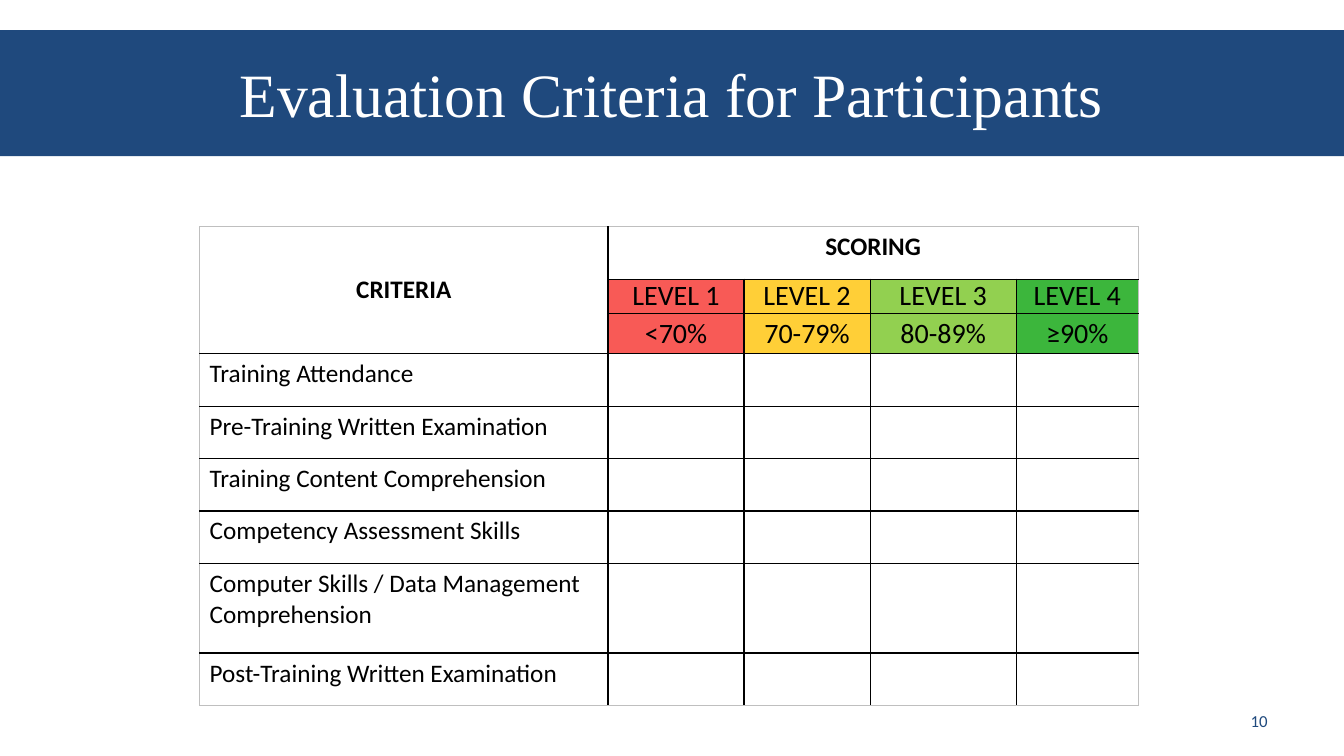
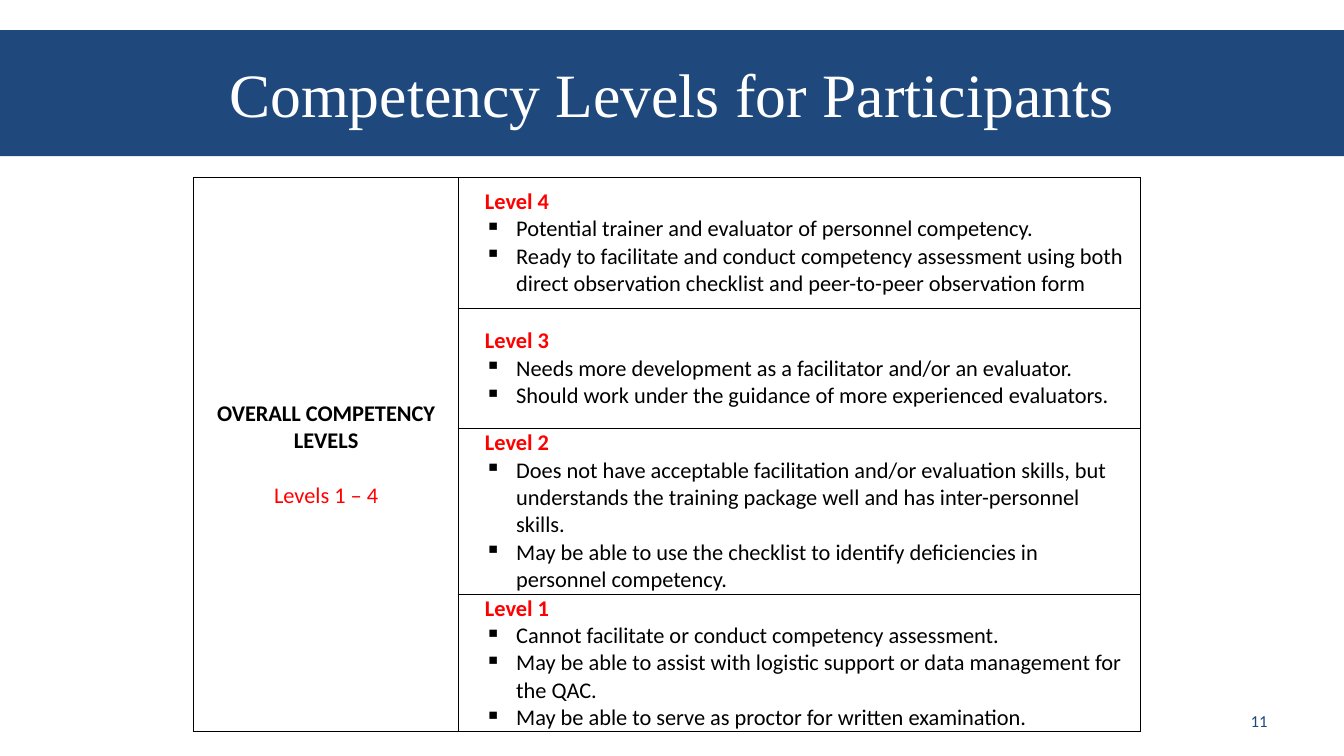
from dataclasses import dataclass

from lxml import etree
from pptx import Presentation
from pptx.dml.color import RGBColor
from pptx.enum.shapes import MSO_SHAPE
from pptx.enum.text import MSO_ANCHOR, PP_ALIGN
from pptx.oxml.ns import qn
from pptx.util import Inches, Pt

RECT = MSO_SHAPE.RECTANGLE
TOP, MIDDLE = MSO_ANCHOR.TOP, MSO_ANCHOR.MIDDLE
LEFT, CENTER, RIGHT = PP_ALIGN.LEFT, PP_ALIGN.CENTER, PP_ALIGN.RIGHT


@dataclass(frozen=True)
class Theme:
    """Colours, fonts and type sizes of the deck."""
    navy: str = "1F497D"
    white: str = "FFFFFF"
    black: str = "000000"
    red: str = "FF0000"
    gray: str = "BFBFBF"
    serif: str = "Times New Roman"
    sans: str = "Calibri"
    title: int = 44
    grade: int = 20
    body: int = 18
    small: int = 16
    foot: int = 12


THEME = Theme()

GRADES = [
    ("LEVEL 1", "<70%", "F85A56"),
    ("LEVEL 2", "70-79%", "FFCF37"),
    ("LEVEL 3", "80-89%", "92D050"),
    ("LEVEL 4", "≥90%", "3CB63C"),
]
CRITERIA = [
    "Training Attendance",
    "Pre-Training Written Examination",
    "Training Content Comprehension",
    "Competency Assessment Skills",
    "Computer Skills / Data Management Comprehension",
    "Post-Training Written Examination",
]
LEVELS = [
    ("Level 4", [
        "Potential trainer and evaluator of personnel competency.",
        "Ready to facilitate and conduct competency assessment using both "
        "direct observation checklist and peer-to-peer observation form",
    ]),
    ("Level 3", [
        "Needs more development as a facilitator and/or an evaluator.",
        "Should work under the guidance of more experienced evaluators.",
    ]),
    ("Level 2", [
        "Does not have acceptable facilitation and/or evaluation skills, but "
        "understands the training package well and has inter-personnel skills.",
        "May be able to use the checklist to identify deficiencies in "
        "personnel competency.",
    ]),
    ("Level 1", [
        "Cannot facilitate or conduct competency assessment.",
        "May be able to assist with logistic support or data management for "
        "the QAC.",
        "May be able to serve as proctor for written examination.",
    ]),
]


def style(para, size, color=THEME.black, bold=False, align=LEFT, font=THEME.sans):
    """Format a paragraph and its runs."""
    para.alignment = align
    for run in para.runs:
        run.font.name = font
        run.font.size = Pt(size)
        run.font.bold = bold
        run.font.color.rgb = RGBColor.from_string(color)


def indent(para, left, hang=0, mark=None):
    """Set the left margin, first-line indent and bullet of a paragraph."""
    props = para._p.get_or_add_pPr()
    props.set("marL", str(Inches(left)))
    props.set("indent", str(Inches(hang)))
    if mark:
        etree.SubElement(props, qn("a:buChar")).set("char", mark)


def add_line(frame, text):
    """Return a new last paragraph holding the text."""
    para = frame.add_paragraph()
    para.text = text
    return para


def add_band(slide, text):
    """Draw the title band."""
    band = slide.shapes.add_shape(RECT, 0, Inches(0.3), Inches(13.33), Inches(1.25))
    band.shadow.inherit = False
    band.fill.solid()
    band.fill.fore_color.rgb = RGBColor.from_string(THEME.navy)
    band.line.fill.background()
    frame = band.text_frame
    frame.text = text
    frame.vertical_anchor = MIDDLE
    style(frame.paragraphs[0], THEME.title, THEME.white, align=CENTER, font=THEME.serif)


def add_number(slide, number):
    """Write the slide number at the lower right."""
    box = slide.shapes.add_textbox(Inches(9.56), Inches(6.95), Inches(3.11), Inches(0.4))
    frame = box.text_frame
    frame.word_wrap = True
    frame.vertical_anchor = MIDDLE
    frame.text = str(number)
    style(frame.paragraphs[0], THEME.foot, THEME.navy, align=RIGHT)


def add_slide(deck, title, number):
    """Add a slide with its band and number."""
    slide = deck.slides.add_slide(deck.slide_layouts[6])
    add_band(slide, title)
    add_number(slide, number)
    return slide


def add_border(cell, side, color):
    """Draw one side of a cell."""
    line = etree.SubElement(cell._tc.get_or_add_tcPr(), qn("a:ln" + side))
    line.set("w", str(Pt(1)))
    fill = etree.SubElement(line, qn("a:solidFill"))
    etree.SubElement(fill, qn("a:srgbClr")).set("val", color)


def paint(cell, color):
    """Fill a cell with a colour."""
    cell.fill.solid()
    cell.fill.fore_color.rgb = RGBColor.from_string(color)


def add_grid(slide, left, top, widths, heights, spans, edge):
    """Add a white ruled table with merged cells and an edge colour."""
    rows, cols = len(heights), len(widths)
    frame = slide.shapes.add_table(rows, cols, Inches(left), Inches(top),
                                   Inches(sum(widths)), Inches(sum(heights)))
    table = frame.table
    table.first_row = table.horz_banding = False
    for col, width in zip(table.columns, widths):
        col.width = Inches(width)
    for row, height in zip(table.rows, heights):
        row.height = Inches(height)
    for start, end in spans:
        table.cell(*start).merge(table.cell(*end))
    for r in range(rows):
        for c in range(cols):
            cell = table.cell(r, c)
            high = cell.span_height if cell.is_merge_origin else 1
            wide = cell.span_width if cell.is_merge_origin else 1
            outer = {"L": c == 0, "R": c + wide == cols,
                     "T": r == 0, "B": r + high == rows}
            for side, is_edge in outer.items():
                add_border(cell, side, edge if is_edge else THEME.black)
            paint(cell, THEME.white)
    return table


def put(cell, text, size, bold=False, align=CENTER, anchor=MIDDLE):
    """Write one paragraph in a cell."""
    cell.text_frame.text = text
    cell.vertical_anchor = anchor
    style(cell.text_frame.paragraphs[0], size, bold=bold, align=align)


def tighten(cell):
    """Give a cell narrow side margins and none above or below."""
    cell.margin_left = cell.margin_right = Inches(0.07)
    cell.margin_top = cell.margin_bottom = 0


def add_scores(slide):
    """Add the table of criteria and scoring levels."""
    heights = [0.52, 0.34, 0.4] + [0.52] * 4 + [0.89, 0.52]
    spans = [((0, 0), (2, 0)), ((0, 1), (0, 4))]
    table = add_grid(slide, 1.98, 2.25, [4.05, 1.35, 1.25, 1.45, 1.21],
                     heights, spans, THEME.gray)
    put(table.cell(0, 0), "CRITERIA", THEME.body, bold=True)
    put(table.cell(0, 1), "SCORING", THEME.body, bold=True, anchor=TOP)
    for c, (name, score, color) in enumerate(GRADES, 1):
        for r, text in enumerate((name, score), 1):
            cell = table.cell(r, c)
            tighten(cell)
            put(cell, text, THEME.grade)
            paint(cell, color)
    for r, text in enumerate(CRITERIA, 3):
        put(table.cell(r, 0), text, THEME.body, align=LEFT, anchor=TOP)


def add_levels(slide):
    """Add the table that describes each competency level."""
    table = add_grid(slide, 1.92, 1.76, [2.63, 6.76], [1.3, 1.19, 1.65, 1.36],
                     [((0, 0), (3, 0))], THEME.black)
    head = table.cell(0, 0)
    tighten(head)
    put(head, "OVERALL COMPETENCY LEVELS", THEME.small, bold=True)
    scale = add_line(head.text_frame, "Levels 1 – 4")
    scale.space_before = Pt(19.5)
    style(scale, THEME.small, THEME.red, align=CENTER)
    for r, (name, points) in enumerate(LEVELS):
        cell = table.cell(r, 1)
        tighten(cell)
        put(cell, name, THEME.small, align=LEFT)
        first = cell.text_frame.paragraphs[0]
        style(first, THEME.small, THEME.red, bold=True)
        indent(first, 0.19)
        for point in points:
            para = add_line(cell.text_frame, point)
            style(para, THEME.small)
            indent(para, 0.5, -0.31, "▪")


def main():
    """Build and save the deck."""
    deck = Presentation()
    deck.slide_width, deck.slide_height = Inches(13.33), Inches(7.5)
    add_scores(add_slide(deck, "Evaluation Criteria for Participants", 10))
    add_levels(add_slide(deck, "Competency Levels for Participants", 11))
    deck.save("out.pptx")


if __name__ == "__main__":
    main()
